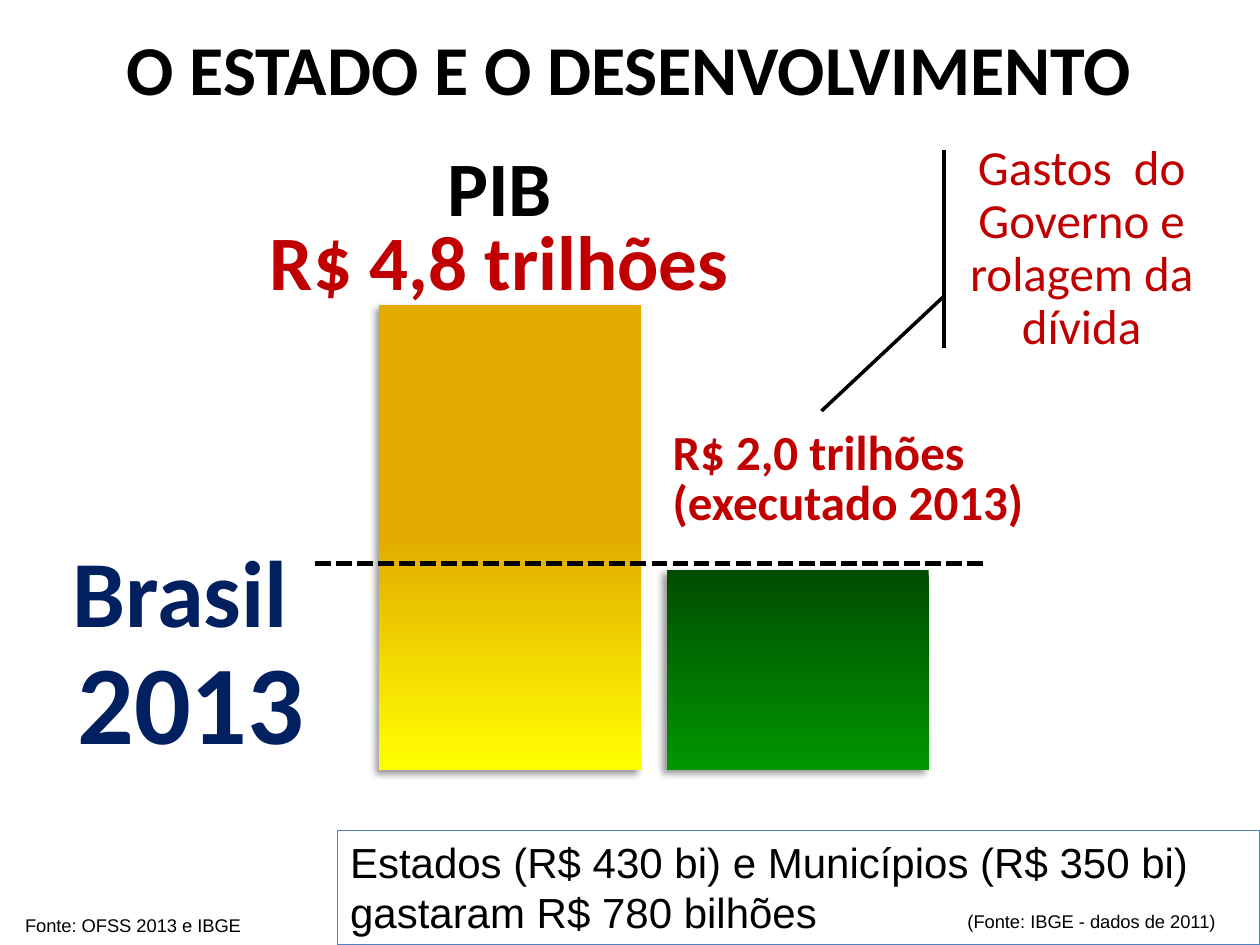
from dataclasses import dataclass
from typing import Optional

from lxml import etree
from pptx import Presentation
from pptx.dml.color import RGBColor
from pptx.enum.dml import MSO_LINE
from pptx.enum.shapes import MSO_CONNECTOR, MSO_SHAPE
from pptx.enum.text import MSO_ANCHOR, PP_ALIGN
from pptx.oxml import parse_xml
from pptx.oxml.ns import nsdecls, qn
from pptx.util import Inches, Pt

LEFT, CENTER = PP_ALIGN.LEFT, PP_ALIGN.CENTER
TOP, MIDDLE = MSO_ANCHOR.TOP, MSO_ANCHOR.MIDDLE
RECT, CALLOUT = MSO_SHAPE.RECTANGLE, MSO_SHAPE.LINE_CALLOUT_1_ACCENT_BAR
STRAIGHT, DASHED = MSO_CONNECTOR.STRAIGHT, MSO_LINE.SQUARE_DOT
COLS, ROWS = 100, 75
WIDTH, HEIGHT = Inches(10), Inches(7.5)


@dataclass(frozen=True)
class Theme:
    head: str = "Calibri"
    body: str = "Arial"
    black: str = "000000"
    red: str = "C00000"
    navy: str = "002060"
    border: str = "4F81BD"
    gold: tuple = ((50, "E2AC00"), (100, "FFFF00"))
    green: tuple = ((0, "004C00"), (100, "009600"))
    country: float = 54
    year: float = 64
    gdp: float = 44
    heading: float = 40
    label: float = 28
    note: float = 24
    source: float = 10.5


T = Theme()


@dataclass(frozen=True)
class Box:
    col: float
    row: float
    cols: float
    rows: float

    def emu(self) -> tuple:
        return x(self.col), y(self.row), x(self.cols), y(self.rows)


@dataclass(frozen=True)
class Run:
    text: str
    size: float
    color: str = T.black
    bold: bool = False
    font: str = T.head


@dataclass(frozen=True)
class Label:
    box: Box
    paras: tuple
    align: PP_ALIGN = CENTER
    anchor: MSO_ANCHOR = MIDDLE
    spacing: Optional[float] = None


@dataclass(frozen=True)
class Bar:
    box: Box
    stops: tuple


def x(cols: float) -> int:
    return round(WIDTH * cols / COLS)


def y(rows: float) -> int:
    return round(HEIGHT * rows / ROWS)


def rgb(color: str) -> RGBColor:
    return RGBColor.from_string(color)


def write(sp, label: Label) -> None:
    tf = sp.text_frame
    tf.word_wrap = True
    tf.vertical_anchor = label.anchor
    tf.text = "\n".join("".join(run.text for run in para) for para in label.paras)
    for p, para in zip(tf.paragraphs, label.paras):
        p.clear()
        p.alignment = label.align
        p.line_spacing = label.spacing
        for run in para:
            if run.text.startswith("\v"):
                p.add_line_break()
            r = p.add_run()
            r.text = run.text.lstrip("\v")
            r.font.name, r.font.size, r.font.bold = run.font, Pt(run.size), run.bold
            r.font.color.rgb = rgb(run.color)


def add_label(slide, label: Label) -> None:
    write(slide.shapes.add_textbox(*label.box.emu()), label)


def add_bar(slide, bar: Bar) -> None:
    sp = slide.shapes.add_shape(RECT, *bar.box.emu())
    sp.line.fill.background()
    sp.fill.gradient()
    sp.fill.gradient_angle = 270
    for stop, (pos, color) in zip(sp.fill.gradient_stops, bar.stops):
        stop.position = pos / 100
        stop.color.rgb = rgb(color)
    sp._element.spPr.append(parse_xml(
        f'<a:effectLst {nsdecls("a")}>'
        f'<a:outerShdw blurRad="{Pt(4)}" dist="{Pt(3)}" dir="{135 * 60000}" rotWithShape="0">'
        f'<a:srgbClr val="{T.black}"><a:alpha val="40000"/></a:srgbClr>'
        '</a:outerShdw></a:effectLst>'))


def add_outlined(slide, kind, label: Label, color: str, width: float):
    sp = slide.shapes.add_shape(kind, *label.box.emu())
    sp.shadow.inherit = False
    sp.fill.background()
    sp.line.color.rgb = rgb(color)
    sp.line.width = Pt(width)
    write(sp, label)
    return sp


def add_level(slide, start: float, end: float, row: float) -> None:
    line = slide.shapes.add_connector(STRAIGHT, x(start), y(row), x(end), y(row))
    line.line.color.rgb = rgb(T.black)
    line.line.width = Pt(3)
    line.line.dash_style = DASHED
    etree.SubElement(line._element.spPr, qn("a:effectLst"))


def add_tab(p, cols: float) -> None:
    tabs = etree.SubElement(p._p.get_or_add_pPr(), qn("a:tabLst"))
    etree.SubElement(tabs, qn("a:tab"), pos=str(x(cols)), algn="l")


BARS = (
    Bar(Box(30.1, 24.2, 20.8, 36.9), T.gold),
    Bar(Box(52.9, 45.2, 20.8, 15.9), T.green),
)
COUNTRY = Label(Box(3.9, 43.8, 22.5, 16.7),
                ((Run("Brasil ", T.country, T.navy, True),
                  Run("\v2013", T.year, T.navy, True)),), spacing=0.9)
LABELS = (
    Label(Box(19.3, 12.2, 40.7, 12.3),
          ((Run("PIB", T.gdp, bold=True),),
           (Run("R$ 4,8 trilhões", T.gdp, T.red, True),)), spacing=0.8),
    Label(Box(52.4, 31.9, 29.9, 12.5),
          ((Run("R$ 2,0 trilhões", T.label, T.red, True),),
           (Run("(executado 2013)", T.label, T.red, True),)), LEFT, spacing=0.85),
    Label(Box(2.5, 1.1, 94.8, 9.4),
          ((Run("O ESTADO E O DESENVOLVIMENTO", T.heading, bold=True),),), spacing=0.9),
    Label(Box(1, 72.1, 20.1, 2.8),
          ((Run("Fonte: OFSS 2013 e IBGE", T.source, font=T.body),),), LEFT, TOP),
)
SPENDING = Label(Box(73.7, 11.9, 24.3, 15.7),
                 ((Run("Gastos  do Governo e rolagem da dívida", T.label, T.red),),),
                 spacing=0.9)
STATES = Label(Box(26.8, 65.9, 73.2, 9.1),
               ((Run("Estados (R$ 430 bi) e Municípios (R$ 350 bi) gastaram R$ 780 bilhões\t",
                     T.note, font=T.body),
                 Run("(Fonte: IBGE - dados de 2011)", T.source, font=T.body)),), LEFT, TOP)


def main() -> None:
    prs = Presentation()
    prs.slide_width, prs.slide_height = WIDTH, HEIGHT
    slide = prs.slides.add_slide(prs.slide_layouts[5])
    for bar in BARS:
        add_bar(slide, bar)
    title = slide.shapes.title
    title.left, title.top, title.width, title.height = COUNTRY.box.emu()
    write(title, COUNTRY)
    for label in LABELS:
        add_label(slide, label)
    callout = add_outlined(slide, CALLOUT, SPENDING, T.black, 2)
    for i, value in enumerate((0.74, 0.05, 1.32, -0.35)):
        callout.adjustments[i] = value
    add_level(slide, 25, 78, 44.7)
    note = add_outlined(slide, RECT, STATES, T.border, 0.75)
    add_tab(note.text_frame.paragraphs[0], 49)
    prs.save("out.pptx")


if __name__ == "__main__":
    main()
